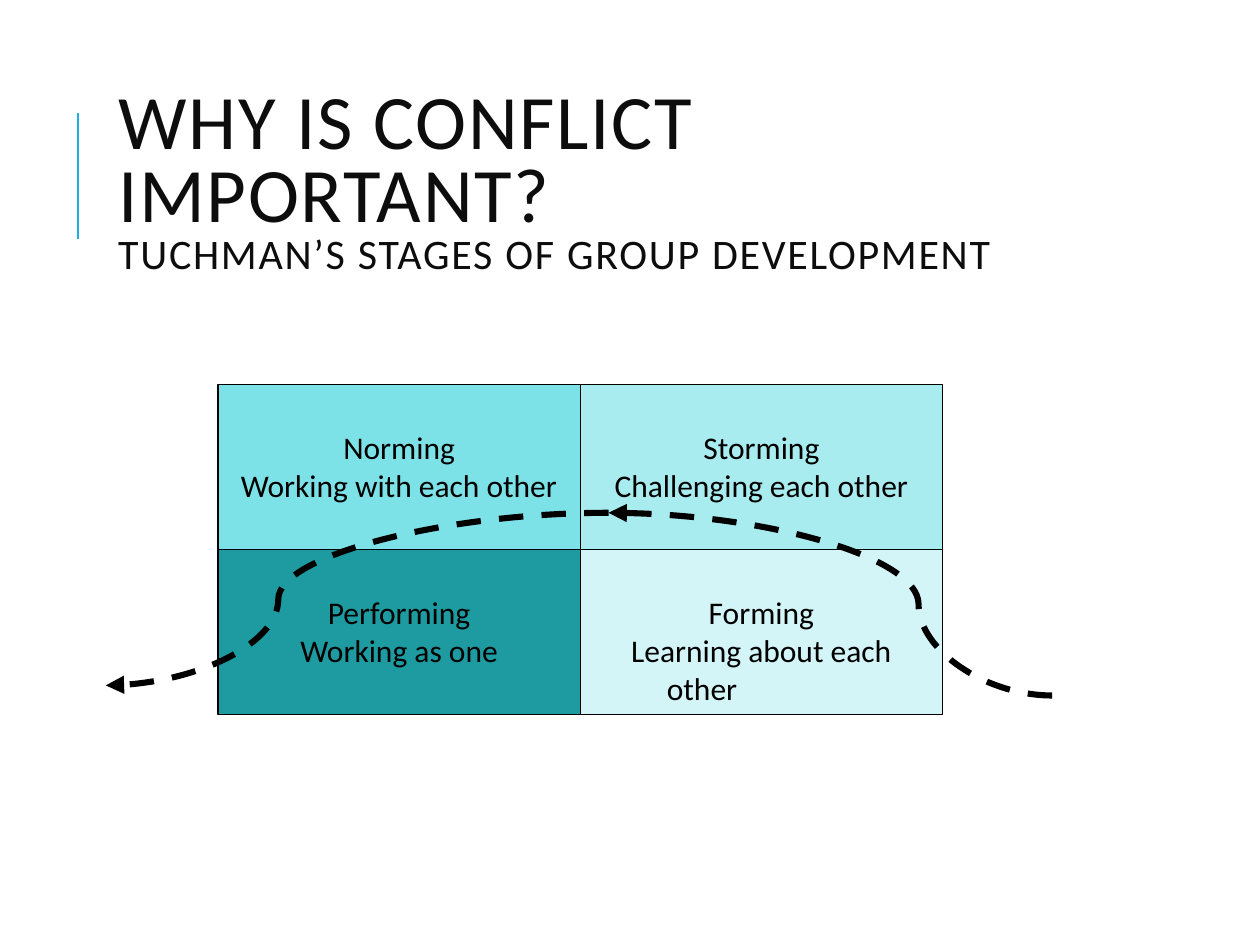
"""Build a slide on Tuchman's four stages of group development."""
from lxml.etree import SubElement
from pptx import Presentation
from pptx.dml.color import RGBColor
from pptx.enum.dml import MSO_LINE
from pptx.enum.shapes import MSO_CONNECTOR as CONNECTOR, MSO_SHAPE as SHAPE
from pptx.enum.text import MSO_ANCHOR as ANCHOR, PP_ALIGN as ALIGN
from pptx.oxml.ns import qn
from pptx.util import Inches, Pt


def paint(color_format, color):
    color_format.rgb = RGBColor.from_string(color)


def add_line(kind, start, end, color, width):
    line = slide.shapes.add_connector(kind, *map(Inches, start + end))
    paint(line.line.color, color)
    line.line.width = Pt(width)
    SubElement(line._element.spPr, qn("a:effectLst"))
    return line


presentation = Presentation()
presentation.slide_width = Inches(10)
presentation.slide_height = Inches(7.5)
slide = presentation.slides.add_slide(presentation.slide_layouts[6])

add_line(CONNECTOR.STRAIGHT, (0.62, 1.9), (0.62, 0.9), "1CADE4", 1.5)

title = slide.shapes.add_textbox(Inches(0.84), Inches(0.64), Inches(7.97), Inches(1.64))
title.text_frame.word_wrap = True
title.text_frame.vertical_anchor = ANCHOR.MIDDLE
paragraph = title.text_frame.paragraphs[0]
paragraph.text = "WHY IS CONFLICT IMPORTANT?\vTUCHMAN’S STAGES OF GROUP DEVELOPMENT"
paragraph.line_spacing = 0.8
for run, size in zip(paragraph.runs, (44, 24)):
    run.font.name = "Calibri"
    run.font.size = Pt(size)
    paint(run.font.color, "0D0D0D")
    run.font._element.set("spc", "100")

stages = [
    (0, 0, "7DE2E7", "Norming\nWorking with each other"),
    (0, 1, "A8ECEF", "Storming\nChallenging each other"),
    (1, 0, "1D9BA1", "Performing\nWorking as one"),
    (1, 1, "D4F5F7", "Forming\nLearning about each other\t\t"),
]
column_width, row_height = 2.875, 1.31
for row, column, color, text in stages:
    stage = slide.shapes.add_shape(
        SHAPE.RECTANGLE,
        Inches(1.73 + column * column_width), Inches(3.05 + row * row_height),
        Inches(column_width), Inches(row_height),
    )
    stage.shadow.inherit = False
    stage.fill.solid()
    paint(stage.fill.fore_color, color)
    paint(stage.line.color, "000000")
    stage.line.width = Pt(0.75)
    frame = stage.text_frame
    frame.word_wrap = True
    frame.vertical_anchor = ANCHOR.TOP
    frame.margin_top = Inches(0.35)
    frame.text = text
    for paragraph in frame.paragraphs:
        paragraph.alignment = ALIGN.CENTER
        for run in paragraph.runs:
            run.font.name = "Calibri"
            run.font.size = Pt(18)
            paint(run.font.color, "000000")

arrows = [
    ((8.35, 5.52), (4.83, 4.07), 30100),
    ((4.83, 4.07), (0.84, 5.44), 65700),
]
for start, end, bend in arrows:
    arrow = add_line(CONNECTOR.CURVE, start, end, "000000", 3.5)
    arrow.line.dash_style = MSO_LINE.DASH
    properties = arrow._element.spPr
    SubElement(properties.find(qn("a:ln")), qn("a:tailEnd"), type="triangle")
    adjustments = properties.find(qn("a:prstGeom")).find(qn("a:avLst"))
    SubElement(adjustments, qn("a:gd"), name="adj1", fmla=f"val {bend}")

presentation.save("out.pptx")
